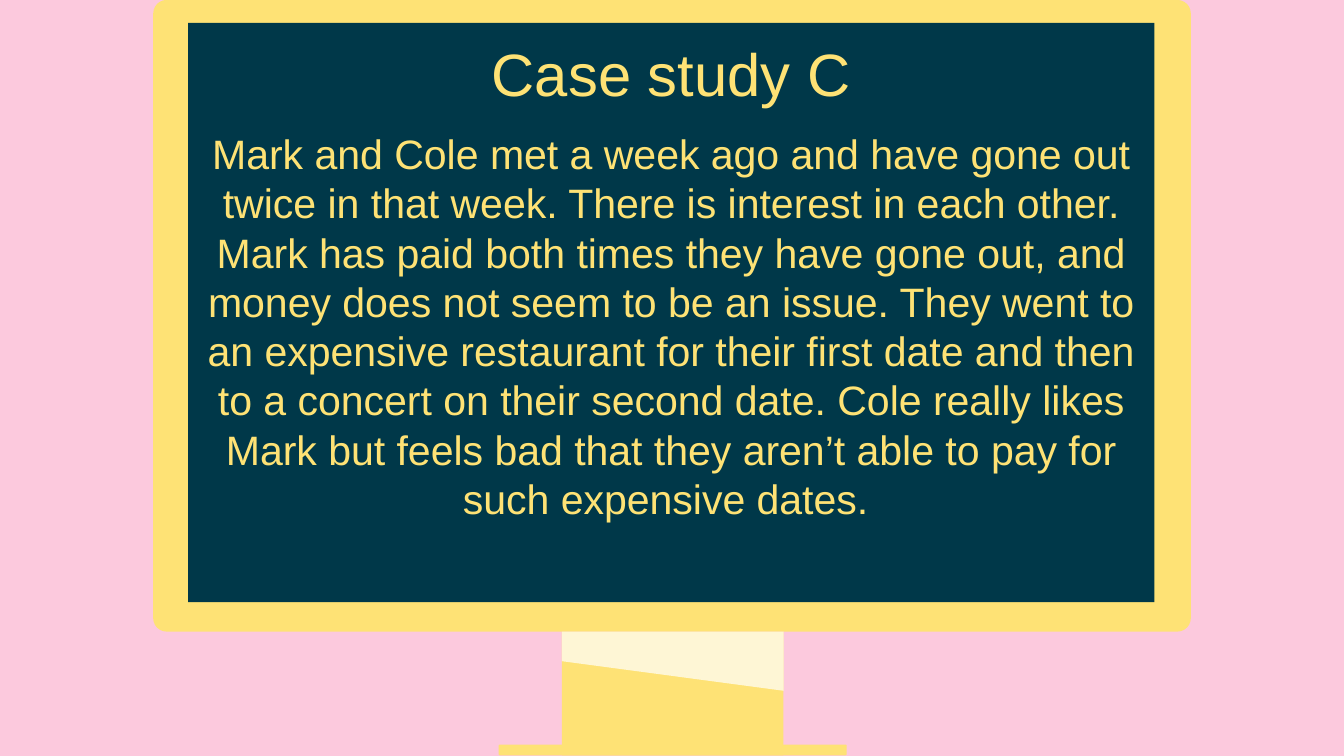
"""Build the "Case study C" slide: text on a drawn computer monitor."""
from pptx import Presentation
from pptx import util as u
from pptx.dml.color import RGBColor
from pptx.enum import shapes, text

WIDTH = 10
HEIGHT = WIDTH * 9 / 16
PINK, YELLOW, CREAM, NAVY = "FCC9DD", "FEE275", "FEF6D5", "003849"
RECTANGLE = shapes.MSO_SHAPE.RECTANGLE
ROUNDED = shapes.MSO_SHAPE.ROUNDED_RECTANGLE

FRAME = (1.14, 0, 7.72, 4.7)
STAND = (4.18, 4.7, 1.65, 0.92)
BASE = (3.71, 5.54, 2.59, 0.08)
SCREEN = (1.4, 0.17, 7.19, 4.31)
SHADE_DROPS = (0.22, 0.44)

PARAGRAPHS = [
    ("Case study C", 32, 0),
    ("Mark and Cole met a week ago and have gone out twice in that week. "
     "There is interest in each other. Mark has paid both times they have gone out, "
     "and money does not seem to be an issue. They went to an expensive restaurant "
     "for their first date and then to a concert on their second date. Cole really "
     "likes Mark but feels bad that they aren’t able to pay for such expensive dates. ",
     22, 11),
]


def color(value):
    return RGBColor.from_string(value)


def set_all(target, **values):
    for name, value in values.items():
        setattr(target, name, value)


def paint(shape, fill):
    shape.fill.solid()
    shape.fill.fore_color.rgb = color(fill)
    shape.line.fill.background()
    shape.shadow.inherit = False
    return shape


def add_block(slide, kind, box, fill, radius=0):
    shape = slide.shapes.add_shape(kind, *map(u.Inches, box))
    if radius:
        shape.adjustments[0] = radius / min(box[2:])
    return paint(shape, fill)


def add_shade(slide):
    left, top, width, _ = STAND
    right = left + width
    left_drop, right_drop = SHADE_DROPS
    corners = [(left, top + left_drop), (right, top + right_drop), (right, top)]
    builder = slide.shapes.build_freeform(u.Inches(left), u.Inches(top))
    builder.add_line_segments([(u.Inches(x), u.Inches(y)) for x, y in corners])
    paint(builder.convert_to_shape(), CREAM)


def write(shape):
    frame = shape.text_frame
    margin = u.Inches(0.1)
    set_all(frame, word_wrap=True, vertical_anchor=text.MSO_ANCHOR.TOP,
            margin_left=margin, margin_right=margin,
            margin_top=margin, margin_bottom=margin)
    for index, (words, size, gap) in enumerate(PARAGRAPHS):
        paragraph = frame.add_paragraph() if index else frame.paragraphs[0]
        set_all(paragraph, alignment=text.PP_ALIGN.CENTER,
                line_spacing=1.0, space_before=u.Pt(gap))
        run = paragraph.add_run()
        run.text = words
        set_all(run.font, name="Arial", size=u.Pt(size))
        run.font.color.rgb = color(YELLOW)


def main():
    presentation = Presentation()
    set_all(presentation, slide_width=u.Inches(WIDTH), slide_height=u.Inches(HEIGHT))
    slide = presentation.slides.add_slide(presentation.slide_layouts[6])
    slide.background.fill.solid()
    slide.background.fill.fore_color.rgb = color(PINK)

    add_block(slide, ROUNDED, FRAME, YELLOW, radius=0.1)
    add_block(slide, RECTANGLE, STAND, YELLOW)
    add_shade(slide)
    add_block(slide, ROUNDED, BASE, YELLOW, radius=0.01)
    write(add_block(slide, RECTANGLE, SCREEN, NAVY))
    presentation.save("out.pptx")


if __name__ == "__main__":
    main()
